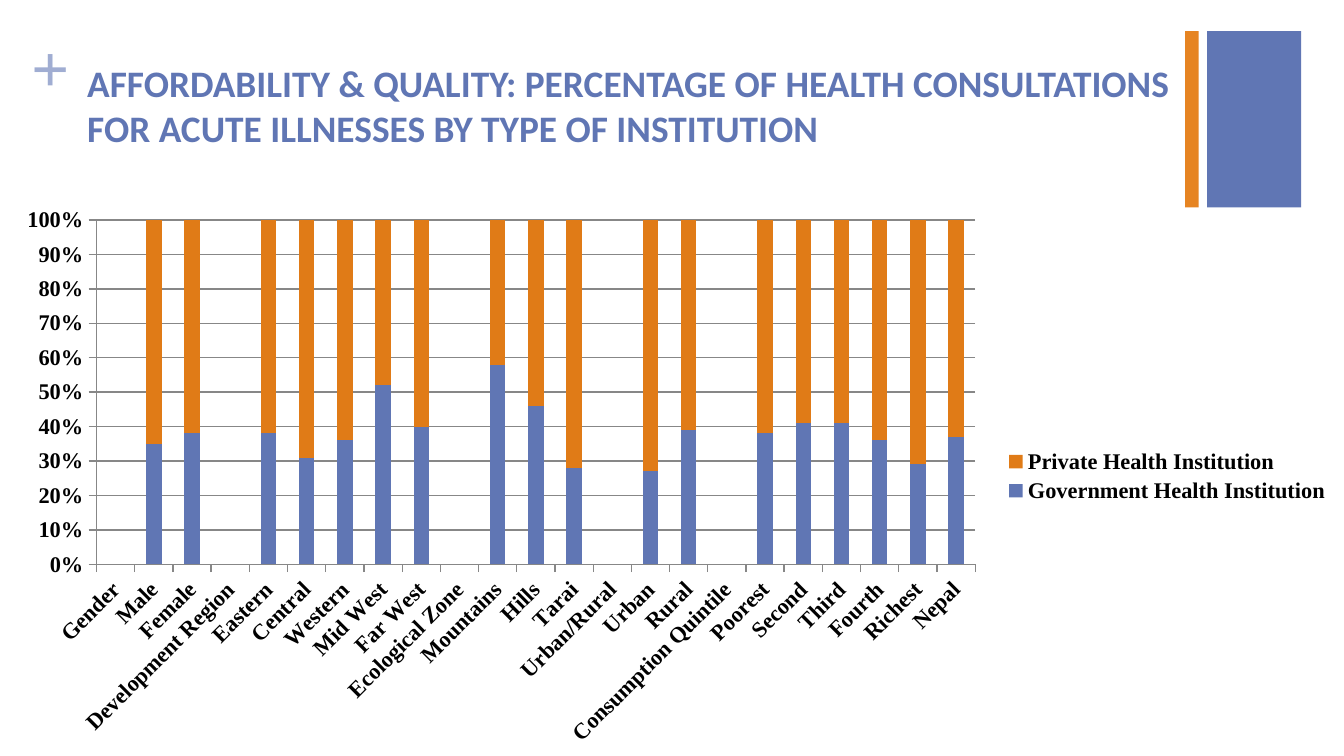
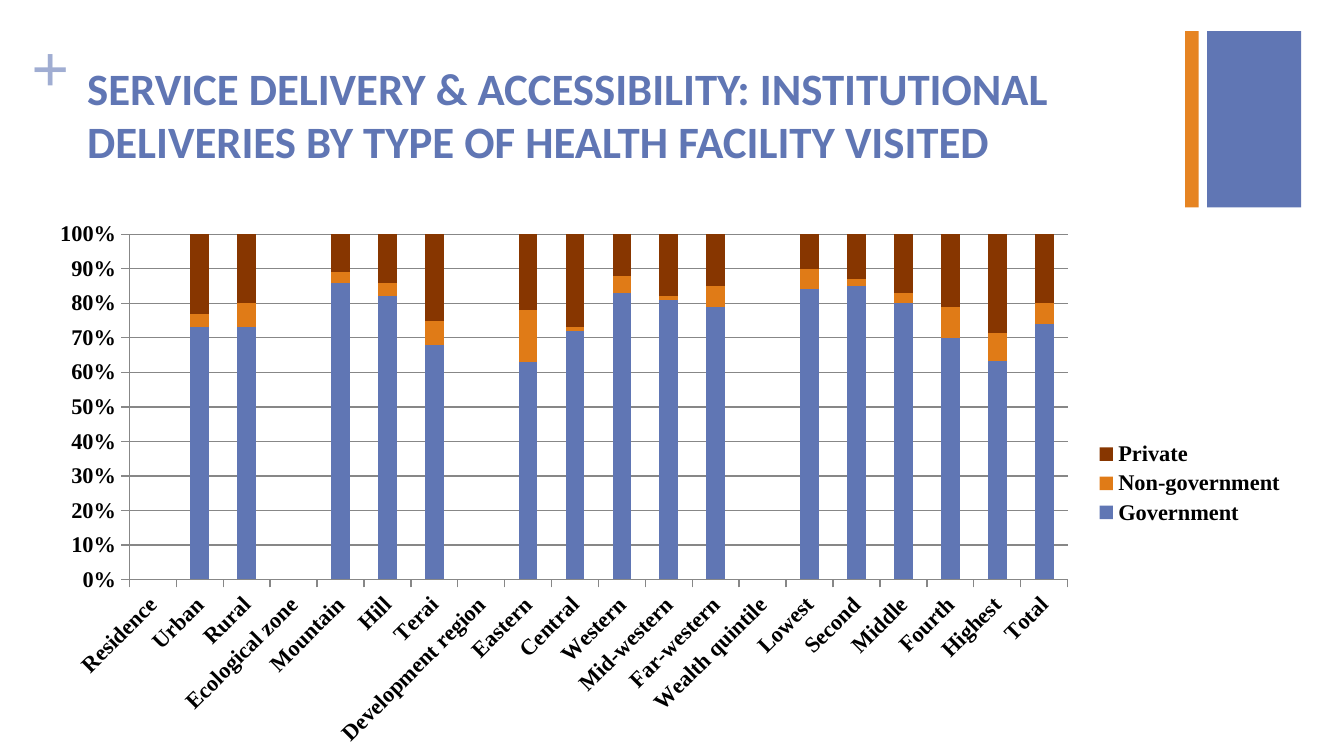
from lxml import etree
from pptx import Presentation
from pptx.chart.data import CategoryChartData
from pptx.dml.color import RGBColor
from pptx.enum.chart import XL_CHART_TYPE, XL_LEGEND_POSITION, XL_TICK_MARK
from pptx.enum.shapes import MSO_SHAPE
from pptx.oxml.ns import qn

STACK = XL_CHART_TYPE.COLUMN_STACKED_100
RIGHT = XL_LEGEND_POSITION.RIGHT
OUT = XL_TICK_MARK.OUTSIDE
RECT = MSO_SHAPE.RECTANGLE
PX = 5715
PT = 12700
BLUE, ORANGE, BROWN = "6076B4", "E07B17", "873600"
BAND, PALE, BLACK, GRAY = "E68422", "A0ADD2", "000000", "878787"
SERIF = "Times New Roman"

BANDS = [((1437, 37, 112, 210), BLUE), ((1411, 37, 16, 210), BAND)]
AXIS = {"major_tick_mark": OUT, "visible": True}
PLOT = {"gap_width": 150, "overlap": 100, "vary_by_categories": False}

SLIDES = [
    {
        "title": "AFFORDABILITY & QUALITY: PERCENTAGE OF HEALTH CONSULTATIONS "
                 "FOR ACUTE ILLNESSES BY TYPE OF INSTITUTION",
        "size": 20,
        "frame": (0, 234, 1600, 666),
        "inner": (115, 262, 1046, 410),
        "names": ["Government Health Institution", "Private Health Institution"],
        "rows": [
            ("Gender", None, None),
            ("Male", 35, 65),
            ("Female", 38, 62),
            ("Development Region", None, None),
            ("Eastern", 38, 62),
            ("Central", 31, 69),
            ("Western", 36, 64),
            ("Mid West", 52, 48),
            ("Far West", 40, 60),
            ("Ecological Zone", None, None),
            ("Mountains", 58, 42),
            ("Hills", 46, 54),
            ("Tarai", 28, 72),
            ("Urban/Rural", None, None),
            ("Urban", 27, 73),
            ("Rural", 39, 61),
            ("Consumption Quintile", None, None),
            ("Poorest", 38, 62),
            ("Second", 41, 59),
            ("Third", 41, 59),
            ("Fourth", 36, 64),
            ("Richest", 29, 71),
            ("Nepal", 37, 63),
        ],
    },
    {
        "title": "SERVICE DELIVERY & ACCESSIBILITY: INSTITUTIONAL "
                 "DELIVERIES BY TYPE OF HEALTH FACILITY VISITED",
        "size": 24,
        "frame": (40, 251, 1506, 649),
        "inner": (154, 279, 1117, 411),
        "names": ["Government", "Non-government", "Private"],
        "rows": [
            ("Residence", None, None, None),
            ("Urban", 73, 4, 23),
            ("Rural", 74, 7, 20),
            ("Ecological zone", None, None, None),
            ("Mountain", 86, 3, 11),
            ("Hill", 82, 4, 14),
            ("Terai", 68, 7, 25),
            ("Development region", None, None, None),
            ("Eastern", 63, 15, 22),
            ("Central", 72, 1, 27),
            ("Western", 83, 5, 12),
            ("Mid-western", 81, 1, 18),
            ("Far-western", 79, 6, 15),
            ("Wealth quintile", None, None, None),
            ("Lowest", 84, 6, 10),
            ("Second", 85, 2, 13),
            ("Middle", 80, 3, 17),
            ("Fourth", 70, 9, 21),
            ("Highest", 64, 8, 29),
            ("Total", 74, 6, 20),
        ],
    },
]


def color(code):
    return RGBColor.from_string(code)


def write(slide, box, text, size, face, ink, inset):
    frame = slide.shapes.add_textbox(*[n * PX for n in box]).text_frame
    form = {"word_wrap": True}
    if not inset:
        form |= {"margin_" + side: 0 for side in ("left", "top", "right", "bottom")}
    for key, val in form.items():
        setattr(frame, key, val)
    run = frame.paragraphs[0].add_run()
    run.text = text
    for key, val in {"size": size * PT, "name": face, "bold": True}.items():
        setattr(run.font, key, val)
    run.font.color.rgb = color(ink)


deck = Presentation()
deck.slide_width, deck.slide_height = 1600 * PX, 900 * PX

for page in SLIDES:
    slide = deck.slides.add_slide(deck.slide_layouts[6])
    for box, ink in BANDS:
        band = slide.shapes.add_shape(RECT, *[n * PX for n in box])
        band.shadow.inherit = False
        band.fill.solid()
        band.fill.fore_color.rgb = color(ink)
        band.line.fill.background()
    write(slide, (38, 30, 46, 98), "+", 36, SERIF, PALE, False)
    write(slide, (88, 64, 1322, 147), page["title"], page["size"], "Calibri", BLUE, True)

    cats, *cols = zip(*page["rows"])
    data = CategoryChartData()
    data.categories = cats
    for name, vals in zip(page["names"], cols):
        data.add_series(name, vals)
    frame = page["frame"]
    chart = slide.shapes.add_chart(STACK, *[n * PX for n in frame], data).chart
    for key, val in {"size": 12 * PT, "name": SERIF, "bold": True}.items():
        setattr(chart.font, key, val)
    chart.font.color.rgb = color(BLACK)
    chart.has_title = False
    chart.has_legend = True
    for key, val in {"position": RIGHT, "include_in_layout": False}.items():
        setattr(chart.legend, key, val)

    plot = chart.plots[0]
    for key, val in PLOT.items():
        setattr(plot, key, val)
    for part, ink in zip(plot.series, (BLUE, ORANGE, BROWN)):
        part.format.fill.solid()
        part.format.fill.fore_color.rgb = color(ink)

    across, up = chart.category_axis, chart.value_axis
    for axis in (across, up):
        for key, val in AXIS.items():
            setattr(axis, key, val)
    up.has_major_gridlines = True
    for line in (across.format.line, up.format.line, up.major_gridlines.format.line):
        line.color.rgb = color(GRAY)
        line.width = 9525
    for key, val in {"number_format": "0%", "number_format_is_linked": False}.items():
        setattr(up.tick_labels, key, val)
    across.tick_labels.font.bold = True
    across._element.find(qn("c:txPr")).find(qn("a:bodyPr")).set("rot", "-2700000")

    area = chart._chartSpace.chart.plotArea
    for old in area.findall(qn("c:layout")):
        area.remove(old)
    place = etree.Element(qn("c:layout"))
    area.insert(0, place)
    hand = etree.SubElement(place, qn("c:manualLayout"))
    left, top, wide, high = page["inner"]
    rule = {
        "layoutTarget": "inner",
        "xMode": "edge",
        "yMode": "edge",
        "x": (left - frame[0]) / frame[2],
        "y": (top - frame[1]) / frame[3],
        "w": wide / frame[2],
        "h": high / frame[3],
    }
    for key, val in rule.items():
        etree.SubElement(hand, qn("c:" + key)).set("val", str(val))

deck.save("out.pptx")
